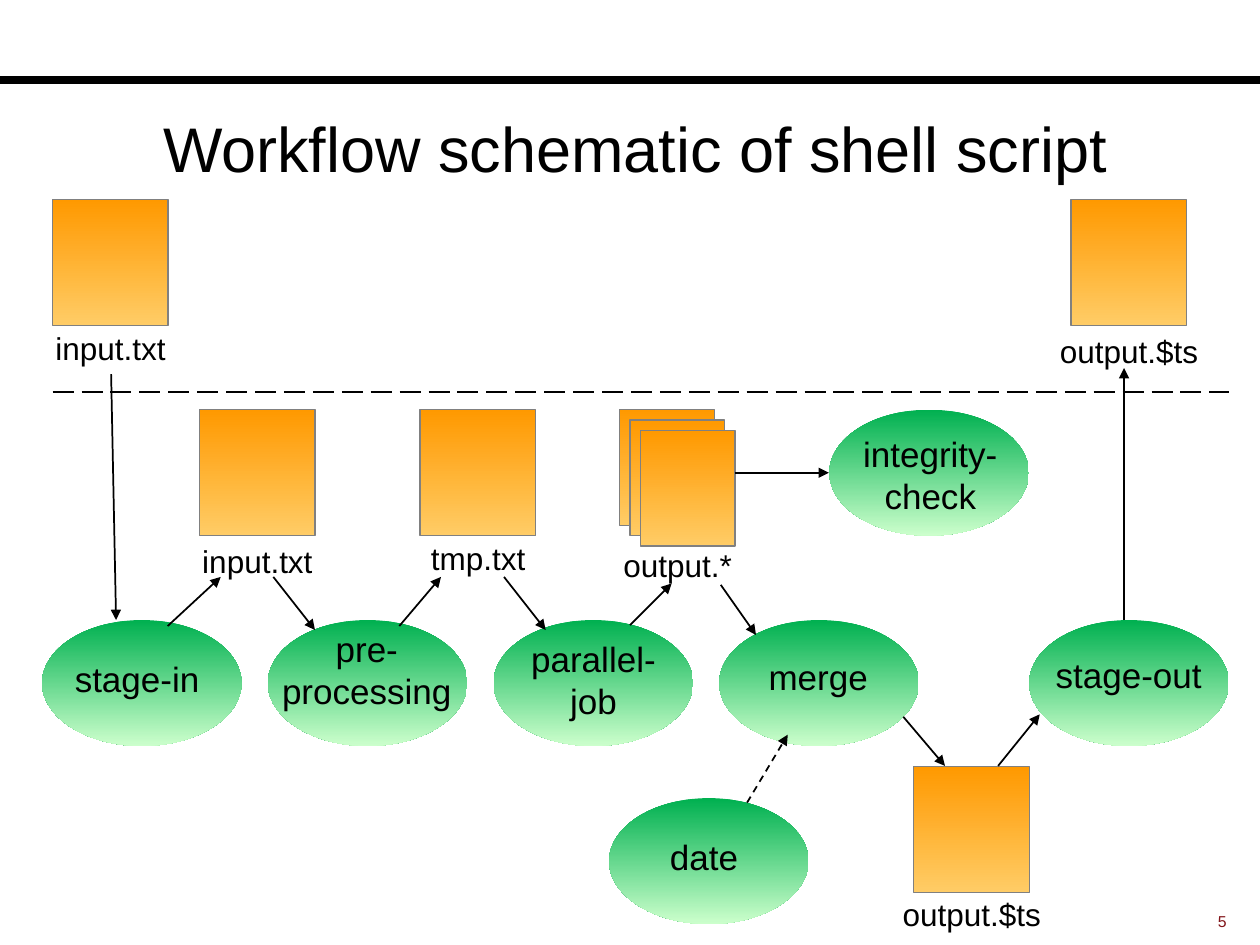
import pptx
import pptx.dml.color
import pptx.enum.dml
import pptx.enum.shapes
import pptx.enum.text
import pptx.oxml.ns
import pptx.util
from lxml import etree

Cm = pptx.util.Cm
Pt = pptx.util.Pt
ALIGN = pptx.enum.text.PP_ALIGN
DASH = pptx.enum.dml.MSO_LINE
SHAPE = pptx.enum.shapes.MSO_SHAPE
qn = pptx.oxml.ns.qn

COLORS = {
    "ink": "000000",
    "number": "82151A",
    "file_top": "FF9900",
    "file_bottom": "FFCC66",
    "file_edge": "808080",
    "step_top": "00B050",
    "step_bottom": "CCFFCC",
}
STEP_SIZE = (4.02, 2.54)
FILE_SIZE = (2.33, 2.54)
STACKED_SIZE = (1.91, 2.33)
STACK_SHIFT = 0.21
STEP_ROW, FILE_ROW, REMOTE_ROW = 12.5, 8.26, 4.02
STEP_LEFT, STEP_PITCH = 0.85, 4.55

# text, left, top, then label offset across, offset down and width
STEPS = [
    ("stage-in", STEP_LEFT, STEP_ROW, 0.22, 0.63, 3.39),
    ("pre-processing", STEP_LEFT + STEP_PITCH, STEP_ROW, -0.12, 0.02, 4.23),
    ("parallel-job", STEP_LEFT + 2 * STEP_PITCH, STEP_ROW, 0.32, 0.22, 3.39),
    ("merge", STEP_LEFT + 3 * STEP_PITCH, STEP_ROW, 0.3, 0.59, 3.39),
    ("stage-out", 20.75, STEP_ROW, 0.1, 0.54, 3.81),
    ("date", 12.28, 16.09, 0.22, 0.63, 3.39),
    ("integrity-check", 16.72, FILE_ROW, 0.34, 0.33, 3.39),
]
# caption, left, top, caption offset down, sheets in the stack
FILES = [
    ("input.txt", 1.06, REMOTE_ROW, 2.49, 1),
    ("input.txt", 4.02, FILE_ROW, 2.54, 1),
    ("tmp.txt", 8.47, FILE_ROW, 2.49, 1),
    ("output.*", 12.49, FILE_ROW, 2.62, 3),
    ("output.$ts", 18.42, 15.45, 2.46, 1),
    ("output.$ts", 21.59, REMOTE_ROW, 2.54, 1),
]
ARROWS = [
    (2.24, 7.54, 2.34, 12.5),
    (3.38, 12.62, 4.45, 11.63),
    (5.51, 11.63, 6.35, 12.7),
    (8.05, 12.62, 8.89, 11.63),
    (10.16, 11.63, 11, 12.7),
    (12.7, 12.6, 13.54, 11.76),
    (14.53, 11.79, 15.24, 12.8),
    (14.81, 9.53, 16.71, 9.53),
    (18.21, 14.45, 19.05, 15.44),
    (20.12, 15.44, 20.96, 14.4),
    (22.66, 12.5, 22.66, 7.42),
]
DATE_ARROW = (15.06, 16.18, 15.88, 14.81)


def rgb(name):
    return pptx.dml.color.RGBColor.from_string(COLORS[name])


def write(box, text, size, color="ink", align=ALIGN.CENTER):
    box.text_frame.word_wrap = True
    para = box.text_frame.paragraphs[0]
    para.alignment = align
    span = para.add_run()
    span.text = text
    for name, value in {"name": "Arial", "size": Pt(size)}.items():
        setattr(span.font, name, value)
    span.font.color.rgb = rgb(color)


def add_text(page, box, text, size, **style):
    write(page.shapes.add_textbox(*map(Cm, box)), text, size, **style)


def add_gradient_shape(page, kind, box, top_color, bottom_color, edge=None):
    shape = page.shapes.add_shape(kind, *map(Cm, box))
    shape.shadow.inherit = False
    shape.fill.gradient()
    shape.fill.gradient_angle = 270
    for stop, color in zip(shape.fill.gradient_stops, (top_color, bottom_color)):
        stop.color.rgb = rgb(color)
    if edge:
        shape.line.color.rgb = rgb(edge)
        shape.line.width = Pt(0.75)
    else:
        shape.line.fill.background()


def add_line(page, ends, width=1, dash=None, arrow=False):
    line = page.shapes.add_connector(
        pptx.enum.shapes.MSO_CONNECTOR.STRAIGHT, *map(Cm, ends))
    line.line.color.rgb = rgb("ink")
    line.line.width = Pt(width)
    if dash:
        line.line.dash_style = dash
    properties = line._element.spPr
    if arrow:
        etree.SubElement(properties.find(qn("a:ln")), qn("a:tailEnd"),
                         type="triangle", w="med", len="med")
    etree.SubElement(properties, qn("a:effectLst"))


def draw_frame(page):
    """Top rule, title and page number."""
    add_line(page, (0, 1.62, 25.4, 1.62), width=4.5)
    title = page.shapes.title
    place = {"left": 0.42, "top": 1.7, "width": 24.77, "height": 2.54}
    for name, value in place.items():
        setattr(title, name, Cm(value))
    title.text_frame.vertical_anchor = pptx.enum.text.MSO_ANCHOR.MIDDLE
    write(title, "Workflow schematic of shell script", 36)
    add_text(page, (22.23, 18.26, 2.75, 0.64), "5", 9,
             color="number", align=ALIGN.RIGHT)


def draw_step(page, text, left, top, across, down, width):
    add_gradient_shape(page, SHAPE.OVAL, (left, top, *STEP_SIZE),
                       "step_top", "step_bottom")
    height = 1.96 if "-" in text and not text.startswith("stage") else 1.12
    add_text(page, (left + across, top + down, width, height), text, 20)


def draw_file(page, caption, left, top, down, sheets):
    size = FILE_SIZE if sheets == 1 else STACKED_SIZE
    for sheet in range(sheets):
        shift = sheet * STACK_SHIFT
        add_gradient_shape(page, SHAPE.RECTANGLE,
                           (left + shift, top + shift, *size),
                           "file_top", "file_bottom", "file_edge")
    add_text(page, (left - 0.63, top + down, 3.6, 1.02), caption, 18)


def draw_flow(page):
    """Divider between remote and local files, and all arrows."""
    add_line(page, (1.06, 7.9, 24.77, 7.9), width=1.5, dash=DASH.LONG_DASH)
    for ends in ARROWS:
        add_line(page, ends, arrow=True)
    add_line(page, DATE_ARROW, dash=DASH.DASH, arrow=True)


def main():
    deck = pptx.Presentation()
    deck.slide_width, deck.slide_height = Cm(25.4), Cm(19.05)
    page = deck.slides.add_slide(deck.slide_layouts[5])
    draw_frame(page)
    for step in STEPS:
        draw_step(page, *step)
    for file in FILES:
        draw_file(page, *file)
    draw_flow(page)
    deck.save("out.pptx")


if __name__ == "__main__":
    main()
